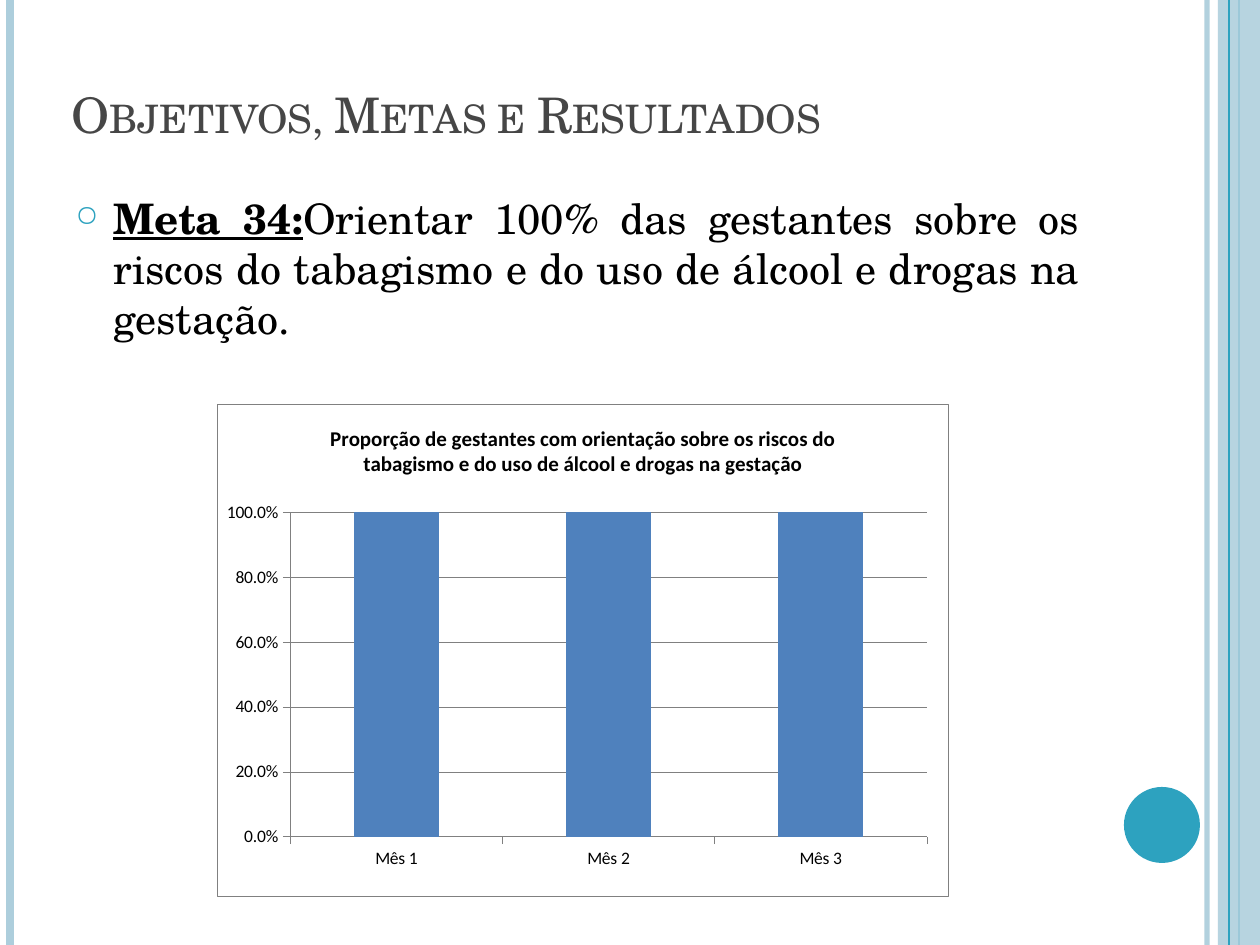
from lxml import etree
from pptx import Presentation
from pptx.chart.data import CategoryChartData
from pptx.dml.color import RGBColor
from pptx.enum.chart import XL_CHART_TYPE as ChartType, XL_TICK_MARK as TickMark
from pptx.enum.shapes import MSO_CONNECTOR as Connector, MSO_SHAPE as Shape
from pptx.enum.text import MSO_ANCHOR as Anchor, PP_ALIGN as Align
from pptx.oxml import parse_xml
from pptx.oxml.ns import nsdecls, qn
from pptx.util import Emu, Pt

PX_PER_INCH = 126
WIDTH, HEIGHT = 1260, 945

BLACK = RGBColor(0x00, 0x00, 0x00)
TITLE_GREY = RGBColor(0x46, 0x46, 0x46)
PALE_BLUE = RGBColor(0xAD, 0xCE, 0xDC)
TEAL = RGBColor(0x2D, 0xA2, 0xBF)
AXIS_GREY = RGBColor(0x80, 0x80, 0x80)
BAR_BLUE = RGBColor(0x4F, 0x81, 0xBD)

SERIF = "TeX Gyre Schola"
SANS = "Calibri"

CHART_TITLE = ("Proporção de gestantes com orientação sobre os riscos do "
               "tabagismo e do uso de álcool e drogas na gestação")


def px(length):
    return Emu(round(length * 914400 / PX_PER_INCH))


def place(box):
    return [px(length) for length in box]


def set_font(font, name, size, color, bold=None):
    font.name, font.size, font.bold = name, Pt(size), bold
    font.color.rgb = color


def set_alpha(shape, percent):
    color = next(shape._element.spPr.iter(qn("a:srgbClr")))
    etree.SubElement(color, qn("a:alpha")).set("val", str(percent * 1000))


def add_rule(page, x, color, weight, alpha=None):
    """Vertical line over the full height of the page."""
    rule = page.shapes.add_connector(Connector.STRAIGHT, px(x), 0, px(x), px(HEIGHT))
    rule.line.color.rgb = color
    rule.line.width = Pt(weight)
    if alpha:
        set_alpha(rule, alpha)
    etree.SubElement(rule._element.spPr, qn("a:effectLst"))


def add_solid(page, kind, box, color):
    shape = page.shapes.add_shape(kind, *place(box))
    shape.shadow.inherit = False
    shape.fill.solid()
    shape.fill.fore_color.rgb = color
    shape.line.fill.background()
    return shape


def add_frame(page):
    """Side rules, right-hand band and disc."""
    add_rule(page, 1207, PALE_BLUE, 3, 93)
    add_rule(page, 10, PALE_BLUE, 4.5)
    add_rule(page, 1239, TEAL, 1.5)
    set_alpha(add_solid(page, Shape.RECTANGLE, (1218, 0, 42, HEIGHT), PALE_BLUE), 87)
    add_rule(page, 1229, TEAL, 0.75)
    add_solid(page, Shape.OVAL, (1124, 787, 76, 76), TEAL)


def add_title(page, box, text):
    title = page.shapes.title
    title.left, title.top, title.width, title.height = place(box)
    frame = title.text_frame
    frame.vertical_anchor = Anchor.BOTTOM
    para = frame.paragraphs[0]
    para.alignment = Align.LEFT
    span = para.add_run()
    span.text = text
    set_font(span.font, SERIF, 28, TITLE_GREY)
    span.font._element.set("cap", "small")


def add_goal(page, box, label, text):
    frame = page.shapes.add_textbox(*place(box)).text_frame
    frame.word_wrap = True
    para = frame.paragraphs[0]
    para.alignment = Align.JUSTIFY
    para.space_before = Pt(6)
    set_font(para.font, SERIF, 24, BLACK)
    heading = para.add_run()
    heading.text = label
    heading.font.bold = heading.font.underline = True
    para.add_run().text = text

    props = para._element.get_or_add_pPr()
    props.set("marL", str(px(38)))
    props.set("indent", str(px(-38)))
    bullet = (f'<a:buClr {nsdecls("a")}><a:srgbClr val="{TEAL}"/></a:buClr>',
              f'<a:buSzPct {nsdecls("a")} val="70000"/>',
              f'<a:buChar {nsdecls("a")} char="○"/>')
    defaults = props.find(qn("a:defRPr"))
    for part in bullet:
        defaults.addprevious(parse_xml(part))


def thin_line(line):
    line.color.rgb = AXIS_GREY
    line.width = Pt(0.25)


def area_format(border):
    return parse_xml(
        f'<c:spPr {nsdecls("c", "a")}>'
        '<a:solidFill><a:srgbClr val="FFFFFF"/></a:solidFill>'
        f'<a:ln w="3175">{border}</a:ln></c:spPr>')


def format_areas(chart):
    """White chart and plot areas, with the plot at a fixed place."""
    space = chart._chartSpace
    outline = f'<a:solidFill><a:srgbClr val="{AXIS_GREY}"/></a:solidFill>'
    space.find(qn("c:chart")).addnext(area_format(outline))
    plot_area = space.find(qn("c:chart")).find(qn("c:plotArea"))
    plot_area.append(area_format("<a:noFill/>"))
    for old in plot_area.findall(qn("c:layout")):
        plot_area.remove(old)
    plot_area.insert(0, parse_xml(
        f'<c:layout {nsdecls("c")}><c:manualLayout><c:layoutTarget val="inner"/>'
        '<c:xMode val="edge"/><c:yMode val="edge"/><c:x val="0.1"/><c:y val="0.22"/>'
        '<c:w val="0.87"/><c:h val="0.66"/></c:manualLayout></c:layout>'))


def add_results_chart(page, box):
    data = CategoryChartData(number_format="0.0%")
    data.categories = ["Mês 1", "Mês 2", "Mês 3"]
    data.add_series(CHART_TITLE, [1, 1, 1])
    chart = page.shapes.add_chart(ChartType.COLUMN_CLUSTERED, *place(box), data).chart
    set_font(chart.font, SANS, 10, BLACK)
    chart.has_legend = False

    chart.has_title = True
    chart.chart_title.include_in_layout = False
    para = chart.chart_title.text_frame.paragraphs[0]
    para.add_run().text = CHART_TITLE
    set_font(para.font, SANS, 12, BLACK, True)

    plot = chart.plots[0]
    plot.gap_width = 150
    plot.vary_by_categories = False
    fill = plot.series[0].format.fill
    fill.solid()
    fill.fore_color.rgb = BAR_BLUE

    values = chart.value_axis
    for axis in (chart.category_axis, values):
        axis.major_tick_mark = TickMark.OUTSIDE
        axis.minor_tick_mark = TickMark.NONE
        set_font(axis.tick_labels.font, SANS, 10, BLACK)
        thin_line(axis.format.line)
    values.minimum_scale, values.maximum_scale, values.major_unit = 0, 1, 0.2
    values.tick_labels.number_format = "0.0%"
    values.tick_labels.number_format_is_linked = False
    thin_line(values.major_gridlines.format.line)
    format_areas(chart)


def main():
    deck = Presentation()
    deck.slide_width, deck.slide_height = px(WIDTH), px(HEIGHT)
    page = deck.slides.add_slide(deck.slide_layouts[5])
    add_frame(page)
    add_goal(page, (63, 186, 1029, 706), "Meta 34:",
             "Orientar 100% das gestantes sobre os riscos do tabagismo "
             "e do uso de álcool e drogas na gestação.")
    add_title(page, (59, 69, 1029, 81), "Objetivos, Metas e Resultados")
    add_results_chart(page, (217, 404, 732, 492))
    deck.save("out.pptx")


if __name__ == "__main__":
    main()
